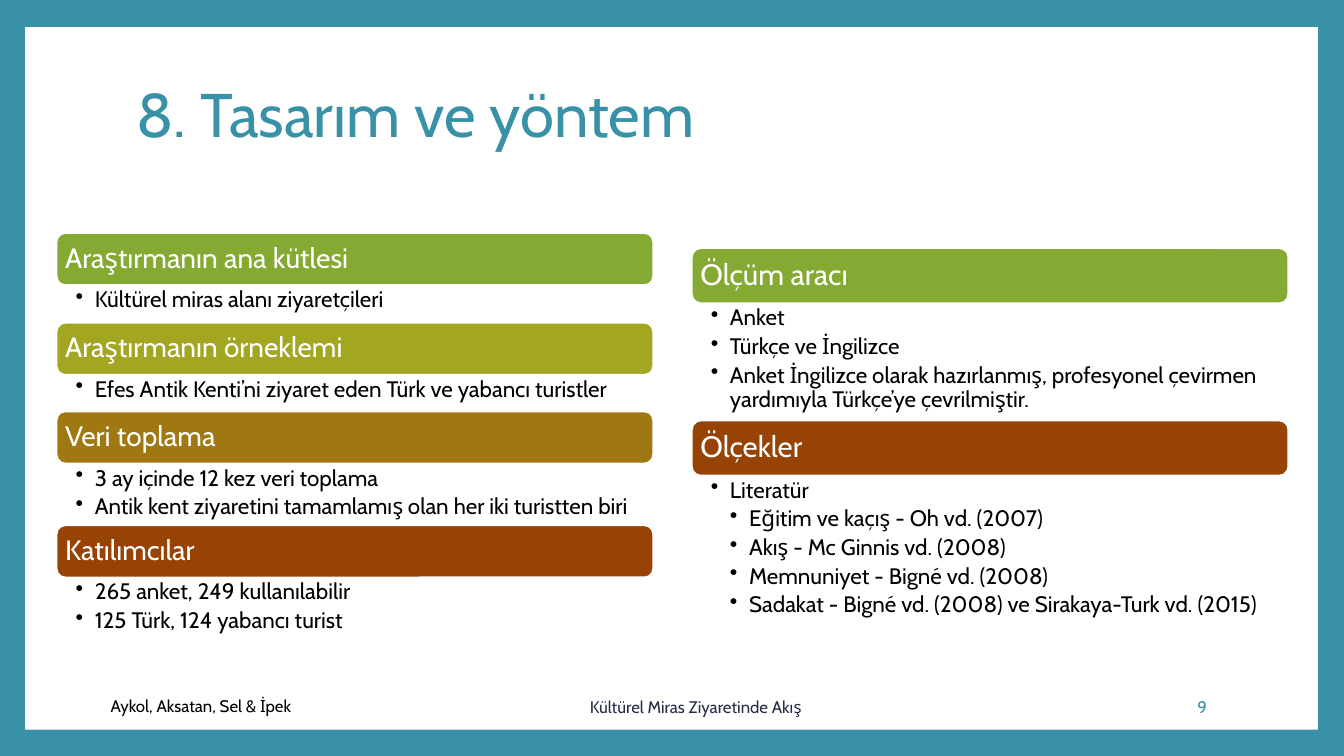
from pptx import Presentation
from pptx.dml.color import RGBColor as RGB
from pptx.enum.shapes import MSO_SHAPE as Shape
from pptx.enum.text import MSO_ANCHOR as Anchor, MSO_AUTO_SIZE as Auto, PP_ALIGN as Align
from pptx.oxml.ns import qn
from pptx.util import Inches, Pt
from lxml import etree

# Content: each section is top, colour, heading, then (level, text) bullets
TITLE = "8. Tasarım ve yöntem"
LEFT = [
    (2.31, "green", "Araştırmanın ana kütlesi", [
        (1, "Kültürel miras alanı ziyaretçileri")]),
    (3.2, "olive", "Araştırmanın örneklemi", [
        (1, "Efes Antik Kenti’ni ziyaret eden Türk ve yabancı turistler")]),
    (4.08, "ochre", "Veri toplama", [
        (1, "3 ay içinde 12 kez veri toplama"),
        (1, "Antik kent ziyaretini tamamlamış olan her iki turistten biri")]),
    (5.21, "brown", "Katılımcılar", [
        (1, "265 anket, 249 kullanılabilir"),
        (1, "125 Türk, 124 yabancı turist")]),
]
RIGHT = [
    (2.46, "green", "Ölçüm aracı", [
        (1, "Anket"),
        (1, "Türkçe ve İngilizce"),
        (1, "Anket İngilizce olarak hazırlanmış, profesyonel çevirmen "
            "yardımıyla Türkçe’ye çevrilmiştir.")]),
    (4.17, "brown", "Ölçekler", [
        (1, "Literatür"),
        (2, "Eğitim ve kaçış - Oh vd. (2007)"),
        (2, "Akış - Mc Ginnis vd. (2008)"),
        (2, "Memnuniyet - Bigné vd. (2008)"),
        (2, "Sadakat - Bigné vd. (2008) ve Sirakaya-Turk vd. (2015)")]),
]
# Columns: left edge, heading height, heading size, bottom edge, sections
COLUMNS = [(0.56, 0.52, 20, 6.33, LEFT), (6.86, 0.55, 21, 6.22, RIGHT)]
# Footer: box, text, colour, alignment, wrap
FOOTER = [
    ((1, 6.85, 2.03, 0.3), "Aykol, Aksatan, Sel & İpek", "black", Align.LEFT, False),
    ((4.32, 6.81, 5.16, 0.4), "Kültürel Miras Ziyaretinde Akış", "navy", Align.CENTER, True),
    ((10.2, 6.81, 1.87, 0.4), "9", "teal", Align.RIGHT, True),
]
COLORS = {"teal": "3891A7", "white": "FFFFFF", "black": "000000", "navy": "242D46",
          "green": "84AA33", "olive": "A3A621", "ochre": "A07811", "brown": "964305"}
FONT = "Cabin"
WIDTH = 5.92
STEP = 0.19


def color(name):
    return RGB.from_string(COLORS[name])


def box(*sides):
    return [Inches(side) for side in sides]


def setup(frame, pads=None, **format):
    """Set the frame's formats and its left, top, right and bottom insets."""
    for key, value in {"word_wrap": True, "auto_size": Auto.NONE, **format}.items():
        setattr(frame, key, value)
    for side, pad in zip(("left", "top", "right", "bottom"), pads or ()):
        setattr(frame, "margin_" + side, Inches(pad))


def write(para, text, size, tint, **format):
    run = para.add_run()
    run.text = text
    for key, value in {"name": FONT, "size": Pt(size)}.items():
        setattr(run.font, key, value)
    run.font.color.rgb = color(tint)
    for key, value in format.items():
        setattr(para, key, value)


def bullet(para, level):
    props = para._p.get_or_add_pPr()
    props.set("marL", str(Inches(STEP * level)))
    props.set("indent", str(-Inches(STEP)))
    etree.SubElement(props, qn("a:buChar")).set("char", "•")


def panel(slide, kind, sides, fill):
    shape = slide.shapes.add_shape(kind, *box(*sides))
    shape.shadow.inherit = False
    shape.fill.solid()
    shape.fill.fore_color.rgb = color(fill)
    return shape


def section(slide, left, high, size, end, part):
    top, fill, head, items = part
    # Heading bar
    bar = panel(slide, Shape.ROUNDED_RECTANGLE, (left, top, WIDTH, high), fill)
    bar.line.color.rgb = color("white")
    bar.line.width = Pt(1.5)
    setup(bar.text_frame, [0.06] * 4, vertical_anchor=Anchor.MIDDLE)
    write(bar.text_frame.paragraphs[0], head, size, "white",
          alignment=Align.LEFT, line_spacing=0.9)
    # Bullets fill the room down to the next heading
    body = slide.shapes.add_textbox(*box(left, top + high, WIDTH, end - top - high))
    frame = body.text_frame
    setup(frame, (0.19, 0.03, 0.16, 0.03))
    for i, (level, text) in enumerate(items):
        para = frame.add_paragraph() if i else frame.paragraphs[0]
        write(para, text, 16, "black", level=level, line_spacing=0.9, space_after=Pt(3.2))
        bullet(para, level)


def main():
    deck = Presentation()
    deck.slide_width, deck.slide_height = box(13.33, 7.5)
    slide = deck.slides.add_slide(deck.slide_layouts[5])

    # Teal frame around a white page
    slide.background.fill.solid()
    slide.background.fill.fore_color.rgb = color("teal")
    page = panel(slide, Shape.RECTANGLE, (0.25, 0.27, 12.82, 6.97), "white")
    page.line.fill.background()

    # Title
    title = slide.shapes.title
    title.left, title.top, title.width, title.height = box(1.25, 0.43, 10.8, 1.48)
    setup(title.text_frame, vertical_anchor=Anchor.MIDDLE)
    write(title.text_frame.paragraphs[0], TITLE, 44, "teal",
          alignment=Align.LEFT, line_spacing=0.9)
    page._element.addnext(title._element)

    # Two columns of sections
    for left, high, size, bottom, parts in COLUMNS:
        ends = [part[0] for part in parts[1:]] + [bottom]
        for part, end in zip(parts, ends):
            section(slide, left, high, size, end, part)

    # Footer
    for sides, text, tint, align, wrap in FOOTER:
        frame = slide.shapes.add_textbox(*box(*sides)).text_frame
        setup(frame, word_wrap=wrap, vertical_anchor=Anchor.MIDDLE)
        write(frame.paragraphs[0], text, 12, tint, alignment=align)

    deck.save("out.pptx")


if __name__ == "__main__":
    main()
